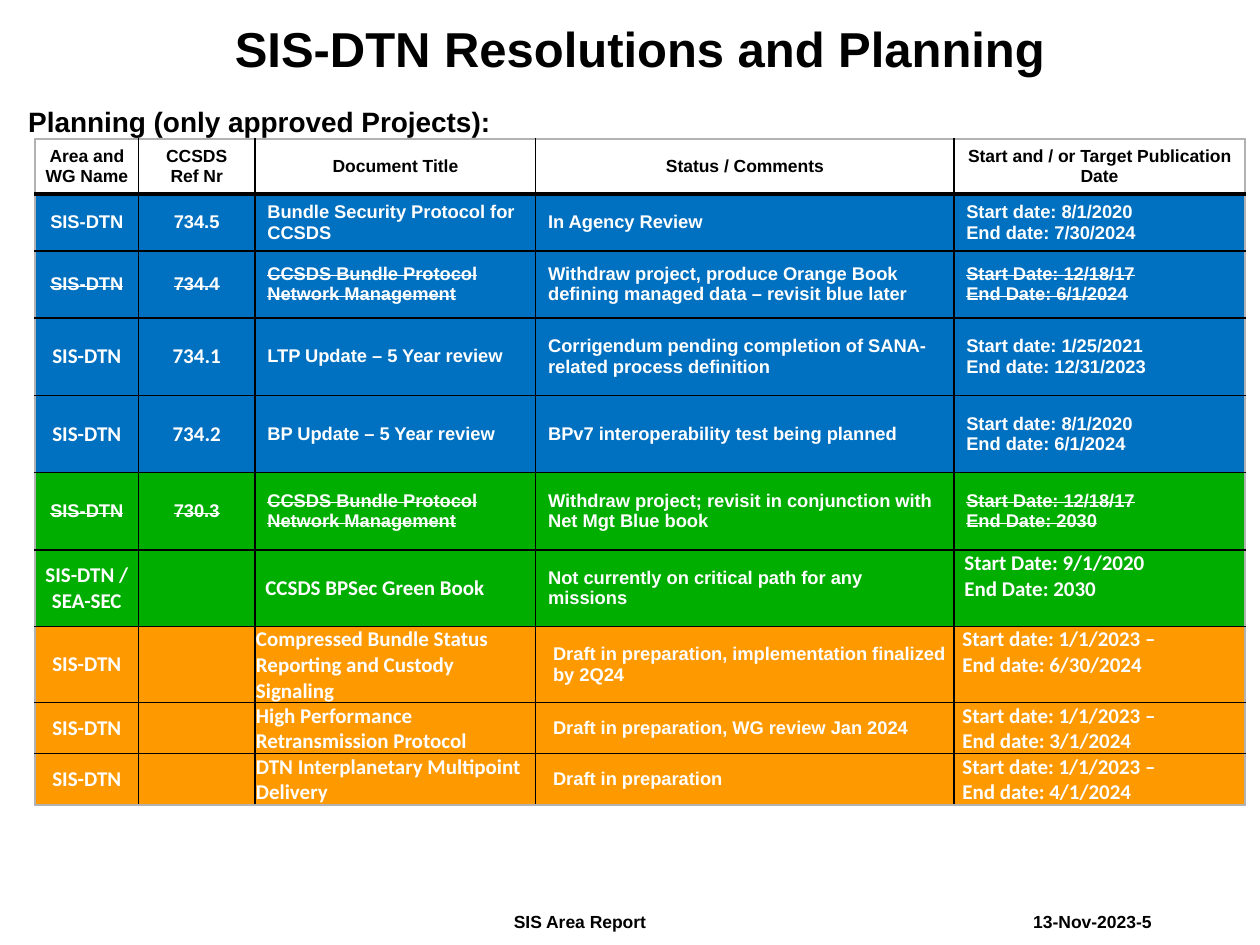
from dataclasses import dataclass

from lxml import etree
from pptx import Presentation
from pptx.dml.color import RGBColor
from pptx.enum.text import MSO_ANCHOR, PP_ALIGN
from pptx.oxml.ns import qn
from pptx.util import Cm, Pt

LEFT, CENTER = PP_ALIGN.LEFT, PP_ALIGN.CENTER
TOP, MIDDLE = MSO_ANCHOR.TOP, MSO_ANCHOR.MIDDLE


@dataclass(frozen=True)
class Theme:
    sans: str = "Arial"
    alternate: str = "Calibri"
    ink: str = "000000"
    frame: str = "B2B2B2"
    white: str = "FFFFFF"
    blue: str = "0070C0"
    green: str = "00AE00"
    orange: str = "FF9900"
    title: float = 28
    subtitle: float = 16
    footer: float = 10
    header: float = 10
    body: float = 10.5
    large: float = 12
    rule: float = 1
    heavy_rule: float = 2.25


THEME = Theme()


@dataclass(frozen=True)
class CellStyle:
    font: str = THEME.sans
    size: float = THEME.body
    color: str = THEME.white
    side: float = 0.25
    top: float = 0.13
    bottom: float = 0.13
    indent: float = 0
    align: PP_ALIGN = LEFT
    anchor: MSO_ANCHOR = MIDDLE
    strike: bool = False


def tight(font=THEME.alternate, size=THEME.large, **options):
    return CellStyle(font, size, side=0.02, top=0.01, bottom=0, **options)


HEADING = CellStyle(size=THEME.header, color=THEME.ink, side=0, align=CENTER)
PLAIN, CENTERED = CellStyle(), CellStyle(align=CENTER)
STRUCK, STRUCK_CENTERED = CellStyle(strike=True), CellStyle(align=CENTER, strike=True)
TIGHT, TIGHT_CENTERED = tight(), tight(align=CENTER)
TIGHT_NAME = tight(indent=0.19)
DRAFT_STATUS = tight(THEME.sans, THEME.body, indent=0.33)
DRAFT_DATE, DRAFT_DATE_TOP = tight(indent=0.15), tight(indent=0.15, anchor=TOP)
GREEN_DATE = tight(indent=0.19, anchor=TOP)

STANDARD = (CENTERED, CENTERED, PLAIN, PLAIN, PLAIN)
WITHDRAWN = (STRUCK_CENTERED, STRUCK_CENTERED, STRUCK, PLAIN, STRUCK)
REVIEW = (TIGHT_CENTERED, TIGHT_CENTERED, PLAIN, PLAIN, PLAIN)
GREEN_BOOK = (TIGHT_CENTERED, TIGHT, TIGHT_NAME, PLAIN, GREEN_DATE)
DRAFT = (TIGHT_CENTERED, TIGHT, TIGHT, DRAFT_STATUS, DRAFT_DATE)
DRAFT_TALL = DRAFT[:4] + (DRAFT_DATE_TOP,)

COLUMN_WIDTHS = (2.08, 2.35, 5.66, 8.43, 5.87)
PROJECT_ROWS = (
    (1.1, None, (HEADING,) * 5,
     ("Area and WG Name", "CCSDS\nRef Nr", "Document Title", "Status / Comments",
      "Start and / or Target Publication Date")),
    (1.15, THEME.blue, STANDARD,
     ("SIS-DTN", "734.5", "Bundle Security Protocol for CCSDS", "In Agency Review",
      "Start date: 8/1/2020\nEnd date: 7/30/2024")),
    (1.35, THEME.blue, WITHDRAWN,
     ("SIS-DTN", "734.4", "CCSDS Bundle Protocol Network Management",
      "Withdraw project, produce Orange Book defining managed data – revisit blue later",
      "Start Date: 12/18/17\nEnd Date: 6/1/2024")),
    (1.56, THEME.blue, REVIEW,
     ("SIS-DTN", "734.1", "LTP Update – 5 Year review",
      "Corrigendum pending completion of SANA-related process definition",
      "Start date: 1/25/2021\nEnd date: 12/31/2023")),
    (1.56, THEME.blue, REVIEW,
     ("SIS-DTN", "734.2", "BP Update – 5 Year review",
      "BPv7 interoperability test being planned",
      "Start date: 8/1/2020\nEnd date: 6/1/2024")),
    (1.56, THEME.green, WITHDRAWN,
     ("SIS-DTN", "730.3", "CCSDS Bundle Protocol Network Management",
      "Withdraw project; revisit in conjunction with Net Mgt Blue book",
      "Start Date: 12/18/17\nEnd Date: 2030")),
    (1.54, THEME.green, GREEN_BOOK,
     ("SIS-DTN / SEA-SEC", "", "CCSDS BPSec Green Book",
      "Not currently on critical path for any missions",
      "Start Date: 9/1/2020\nEnd Date: 2030")),
    (1.53, THEME.orange, DRAFT_TALL,
     ("SIS-DTN", "", "Compressed Bundle Status Reporting and Custody Signaling",
      "Draft in preparation, implementation finalized by 2Q24",
      "Start date: 1/1/2023 –\nEnd date: 6/30/2024")),
    (1.03, THEME.orange, DRAFT,
     ("SIS-DTN", "", "High Performance Retransmission Protocol",
      "Draft in preparation, WG review Jan 2024",
      "Start date: 1/1/2023 –\nEnd date: 3/1/2024")),
    (1.03, THEME.orange, DRAFT,
     ("SIS-DTN", "", "DTN Interplanetary Multipoint Delivery", "Draft in preparation",
      "Start date: 1/1/2023 –\nEnd date: 4/1/2024")),
)


def add_run(paragraph, text, font, size, color, strike=False):
    run = paragraph.add_run()
    run.text = text
    run.font.name = font
    run.font.size = Pt(size)
    run.font.bold = True
    run.font.color.rgb = RGBColor.from_string(color)
    if strike:
        run.font._element.set("strike", "sngStrike")


def indent_paragraph(paragraph, indent):
    properties = paragraph._p.get_or_add_pPr()
    properties.set("marL", str(Cm(indent)))
    properties.set("indent", "0")


def set_margins(frame, side, top, bottom):
    frame.margin_left = frame.margin_right = Cm(side)
    frame.margin_top, frame.margin_bottom = Cm(top), Cm(bottom)


def add_outline(slide, box):
    left, top, width, height = map(Cm, box)
    right, bottom = left + width, top + height
    builder = slide.shapes.build_freeform(left, top)
    builder.add_line_segments([(right, top), (right, bottom), (left, bottom)], close=True)
    outline = builder.convert_to_shape()
    outline.fill.background()
    outline.line.fill.background()
    outline.shadow.inherit = False
    return outline


def write_label(holder, text, size, margins, wrap=True, align=LEFT, spacing=1.0, indent=0):
    frame = holder.text_frame
    frame.word_wrap = wrap
    frame.vertical_anchor = TOP
    set_margins(frame, *margins)
    paragraph = frame.paragraphs[0]
    paragraph.alignment = align
    paragraph.line_spacing = spacing
    indent_paragraph(paragraph, indent)
    add_run(paragraph, text, THEME.sans, size, THEME.ink)


def add_headings(slide, box):
    left, top, width, height = box
    margins = (0.15, 0.15, 0.15)
    planning = add_outline(slide, (left, top + 1.47, width, height - 1.47))
    write_label(planning, "Planning (only approved Projects):", THEME.subtitle, margins,
                spacing=1.2)
    title = add_outline(slide, (left + 2.03, top, 19.63, 1.47))
    write_label(title, "SIS-DTN Resolutions and Planning", THEME.title, margins,
                align=CENTER, spacing=0.9, indent=1.27)


def add_footer(slide, box):
    left, top, width, height = box
    date_width = 3.1
    labels = (("SIS Area Report", left, 3.18),
              ("13-Nov-2023-5", left + width - date_width, date_width))
    for text, label_left, label_width in labels:
        label = slide.shapes.add_textbox(*map(Cm, (label_left, top, label_width, height)))
        write_label(label, text, THEME.footer, (0.23, 0.1, 0.1), wrap=False)


def draw_borders(cell, borders):
    properties = cell._tc.get_or_add_tcPr()
    for position, (tag, (color, width)) in enumerate(borders.items()):
        line = etree.Element(qn(tag), w=str(Pt(width)))
        fill = etree.SubElement(line, qn("a:solidFill"))
        etree.SubElement(fill, qn("a:srgbClr"), val=color)
        properties.insert(position, line)


def fill_cell(cell, text, style, fill):
    if fill:
        cell.fill.solid()
        cell.fill.fore_color.rgb = RGBColor.from_string(fill)
    else:
        cell.fill.background()
    cell.vertical_anchor = style.anchor
    set_margins(cell, style.side, style.top, style.bottom)
    for number, line in enumerate(text.split("\n") if text else ()):
        frame = cell.text_frame
        paragraph = frame.add_paragraph() if number else frame.paragraphs[0]
        paragraph.alignment = style.align
        indent_paragraph(paragraph, style.indent)
        add_run(paragraph, line, style.font, style.size, style.color, style.strike)


def add_projects(slide, box):
    table = slide.shapes.add_table(len(PROJECT_ROWS), len(COLUMN_WIDTHS), *map(Cm, box)).table
    table.horz_banding = False
    for column, width in zip(table.columns, COLUMN_WIDTHS):
        column.width = Cm(width)
    inner, outer = (THEME.ink, THEME.rule), (THEME.frame, THEME.rule)
    heavy = (THEME.ink, THEME.heavy_rule)
    last_row, last_column = len(PROJECT_ROWS) - 1, len(COLUMN_WIDTHS) - 1
    for index, (height, fill, styles, texts) in enumerate(PROJECT_ROWS):
        table.rows[index].height = Cm(height)
        top = {0: outer, 1: heavy}.get(index, inner)
        bottom = {0: heavy, last_row: outer}.get(index, inner)
        for column, (text, style) in enumerate(zip(texts, styles)):
            cell = table.cell(index, column)
            fill_cell(cell, text, style, fill)
            draw_borders(cell, {"a:lnL": inner if column else outer,
                                "a:lnR": outer if column == last_column else inner,
                                "a:lnT": top, "a:lnB": bottom})


def main():
    deck = Presentation()
    deck.slide_width, deck.slide_height = Cm(25.4), Cm(19.05)
    slide = deck.slides.add_slide(deck.slide_layouts[6])
    add_footer(slide, (10.13, 18.27, 13.57, 0.66))
    add_headings(slide, (0.42, 0.35, 24.64, 12.57))
    add_projects(slide, (0.71, 2.8, sum(COLUMN_WIDTHS), sum(row[0] for row in PROJECT_ROWS)))
    deck.save("out.pptx")


if __name__ == "__main__":
    main()
